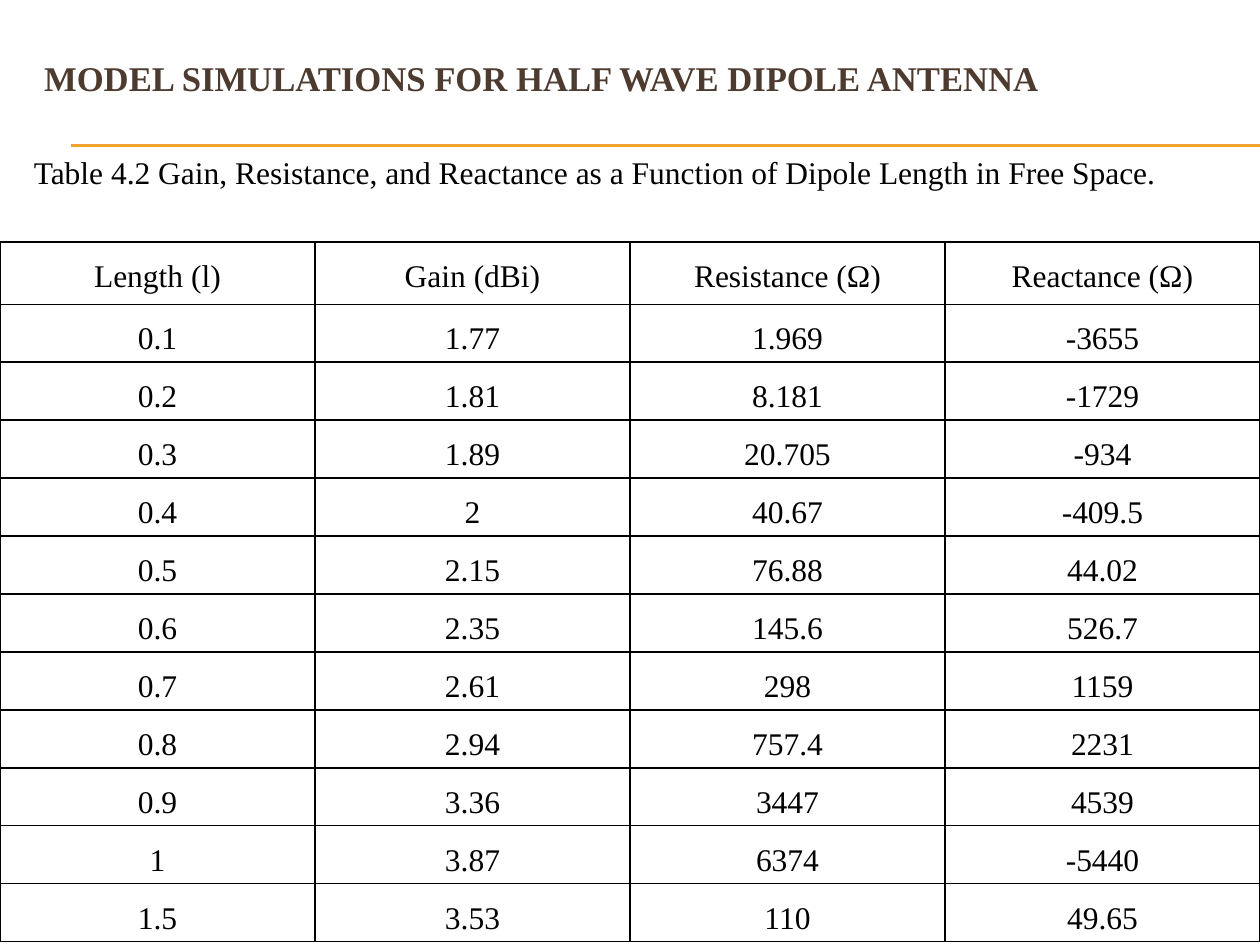
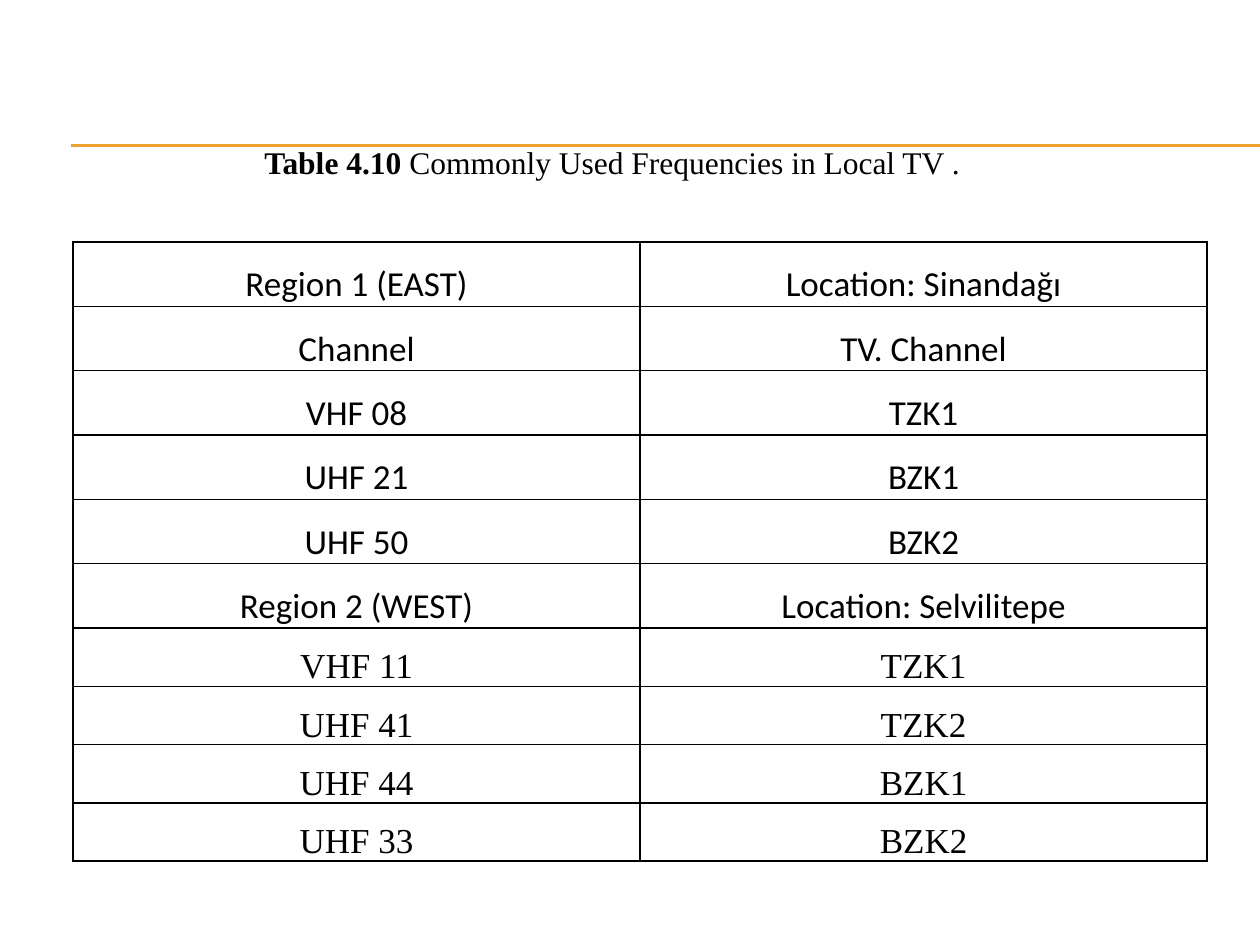
import pptx
import pptx.dml.color
import pptx.enum.shapes
import pptx.enum.text
import pptx.oxml.ns
import pptx.util
from lxml import etree

COLUMNS, ROWS = 20, 15
TITLE_ONLY, BLANK = 5, 6
ANCHOR = pptx.enum.text.MSO_ANCHOR
ALIGN = pptx.enum.text.PP_ALIGN

DIPOLE_ROWS = [
    ("Length (l)", "Gain (dBi)", "Resistance (Ω)", "Reactance (Ω)"),
    ("0.1", "1.77", "1.969", "-3655"),
    ("0.2", "1.81", "8.181", "-1729"),
    ("0.3", "1.89", "20.705", "-934"),
    ("0.4", "2", "40.67", "-409.5"),
    ("0.5", "2.15", "76.88", "44.02"),
    ("0.6", "2.35", "145.6", "526.7"),
    ("0.7", "2.61", "298", "1159"),
    ("0.8", "2.94", "757.4", "2231"),
    ("0.9", "3.36", "3447", "4539"),
    ("1", "3.87", "6374", "-5440"),
    ("1.5", "3.53", "110", "49.65"),
]
EAST_ROWS = [
    ("Region 1 (EAST)", "Location: Sinandağı"),
    ("Channel", "TV. Channel"),
    ("VHF 08", "TZK1"),
    ("UHF 21", "BZK1"),
    ("UHF 50", "BZK2"),
    ("Region 2 (WEST)", "Location: Selvilitepe"),
]
WEST_ROWS = [
    ("VHF 11", "TZK1"),
    ("UHF 41", "TZK2"),
    ("UHF 44", "BZK1"),
    ("UHF 33", "BZK2"),
]


def color(hex_text):
    return pptx.dml.color.RGBColor.from_string(hex_text)


def add_xml(parent, tag, **attributes):
    return etree.SubElement(parent, pptx.oxml.ns.qn(tag), attributes)


class SlideBuilder:
    """Style and current slide; lengths are columns and rows of the grid."""

    serif, sans = "Times New Roman", "Calibri"
    ink, title_ink, rule_ink = "000000", "4E3B30", "F0A22E"
    rule_left, rule_rows = 1.12, (2.3, 2.32)

    def __init__(self, deck):
        self.deck = deck
        self.slide = None

    def x(self, columns):
        return round(self.deck.slide_width * columns / COLUMNS)

    def y(self, rows):
        return round(self.deck.slide_height * rows / ROWS)

    def area(self, left, top, width, height):
        return self.x(left), self.y(top), self.x(width), self.y(height)

    def new_slide(self, layout):
        self.slide = self.deck.slides.add_slide(self.deck.slide_layouts[layout])
        for row in self.rule_rows:
            self.rule(row)

    def rule(self, row):
        line = self.slide.shapes.add_connector(
            pptx.enum.shapes.MSO_CONNECTOR.STRAIGHT,
            self.x(self.rule_left), self.y(row), self.x(COLUMNS), self.y(row))
        line.line.color.rgb = color(self.rule_ink)
        line.line.width = pptx.util.Pt(0.75)
        add_xml(line._element.spPr, "a:effectLst")

    def format_span(self, span, size, font=serif, ink=ink, bold=False):
        span.font.name = font
        span.font.size = pptx.util.Pt(size)
        span.font.bold = bold
        span.font.color.rgb = color(ink)

    def title(self, text):
        box = self.slide.shapes.title
        box.left, box.top, box.width, box.height = self.area(0.5, 0.8, 19, 1.84)
        frame = box.text_frame
        frame.text = text
        frame.auto_size = pptx.enum.text.MSO_AUTO_SIZE.NONE
        frame.vertical_anchor = ANCHOR.TOP
        para = frame.paragraphs[0]
        para.alignment = ALIGN.LEFT
        self.format_span(para.runs[0], 19.8, ink=self.title_ink, bold=True)

    def caption(self, area, text, label=""):
        """Add a table caption whose optional label is bold."""
        frame = self.slide.shapes.add_textbox(*self.area(*area)).text_frame
        frame.word_wrap = True
        para = frame.paragraphs[0]
        for words, bold in ((label, True), (text, False)):
            if words:
                span = para.add_run()
                span.text = words
                self.format_span(span, 18, bold=bold)

    def table(self, left, top, width, row_heights, records):
        grid = self.slide.shapes.add_table(
            len(records), len(records[0]),
            *self.area(left, top, width, sum(row_heights))).table
        grid.first_row = grid.horz_banding = False
        for row, height in zip(grid.rows, row_heights):
            row.height = self.y(height)
        for row, record in zip(grid.rows, records):
            for cell, text in zip(row.cells, record):
                self.fill_cell(cell, text)
        return grid

    def fill_cell(self, cell, text):
        cell.text = text
        cell.margin_left = cell.margin_right = pptx.util.Inches(0.07)
        cell.margin_top = cell.margin_bottom = 0
        para = cell.text_frame.paragraphs[0]
        para.alignment = ALIGN.CENTER
        para.line_spacing = 1.5
        self.format_span(para.runs[0], 18)
        properties = cell._tc.get_or_add_tcPr()
        for side in ("a:lnL", "a:lnR", "a:lnT", "a:lnB"):
            border = add_xml(properties, side, w=str(pptx.util.Pt(1)))
            add_xml(add_xml(border, "a:solidFill"), "a:srgbClr", val=self.ink)
        cell.fill.background()

    def restyle_rows(self, rows, size, font, anchor):
        for row in rows:
            for cell in row.cells:
                cell.vertical_anchor = anchor
                self.format_span(cell.text_frame.paragraphs[0].runs[0], size, font)


def build_dipole_slide(builder):
    builder.new_slide(TITLE_ONLY)
    builder.title("MODEL SIMULATIONS FOR HALF WAVE DIPOLE ANTENNA")
    heights = [0.99] + [0.92] * (len(DIPOLE_ROWS) - 1)
    builder.table(0, 3.84, COLUMNS, heights, DIPOLE_ROWS)
    builder.caption((0.34, 2.33, 19.66, 0.8),
                    "Table 4.2 Gain, Resistance, and Reactance as a Function "
                    "of Dipole Length in Free Space.")


def build_frequency_slide(builder):
    builder.new_slide(BLANK)
    heights = [1.02] * len(EAST_ROWS) + [0.92] * len(WEST_ROWS)
    grid = builder.table(1.16, 3.84, 18, heights, EAST_ROWS + WEST_ROWS)
    rows = list(grid.rows)
    west_start = len(EAST_ROWS)
    builder.restyle_rows(rows[:west_start], 20, builder.sans, ANCHOR.TOP)
    builder.restyle_rows(rows[west_start:], 20, builder.serif, ANCHOR.BOTTOM)
    builder.caption((4, 2.17, 11.9, 1.42),
                    " Commonly Used Frequencies in Local TV .", label="Table 4.10")


def main():
    deck = pptx.Presentation()
    deck.slide_width = pptx.util.Inches(10)
    deck.slide_height = pptx.util.Inches(7.5)
    builder = SlideBuilder(deck)
    build_dipole_slide(builder)
    build_frequency_slide(builder)
    deck.save("out.pptx")


if __name__ == "__main__":
    main()
